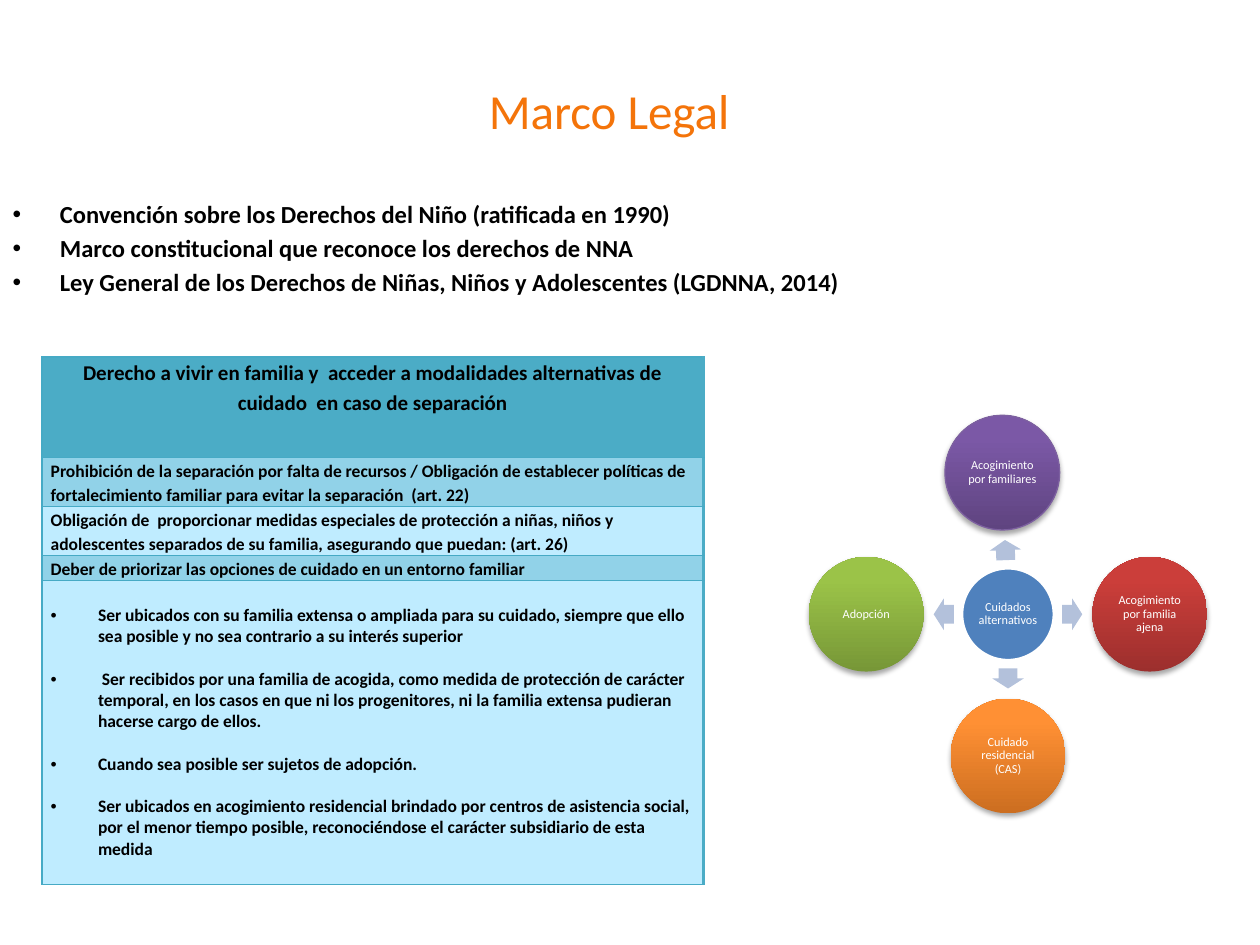
from dataclasses import dataclass
from math import cos, radians, sin
from typing import Any

from lxml.etree import SubElement
from pptx import Presentation
from pptx.dml.color import RGBColor
from pptx.enum.shapes import MSO_SHAPE as Shape
from pptx.enum.text import MSO_ANCHOR as Anchor, MSO_AUTO_SIZE as AutoSize, PP_ALIGN as Align
from pptx.oxml.ns import qn
from pptx.util import Pt

BLACK, WHITE, BORDER = "000000", "FFFFFF", "46AAC5"
HEADER, BAND, PALE = "4BACC6", "91D2E8", "BFECFF"

LAWS = [
    "Convención sobre los Derechos del Niño (ratificada en 1990)",
    "Marco constitucional que reconoce los derechos de NNA",
    "Ley General de los Derechos de Niñas, Niños y Adolescentes (LGDNNA, 2014)",
]
RIGHT_TO_FAMILY = "Derecho a vivir en familia y  acceder a modalidades alternativas de cuidado  en caso de separación"
DUTIES = [
    "Prohibición de la separación por falta de recursos / Obligación de establecer políticas de fortalecimiento familiar para evitar la separación  (art. 22)",
    "Obligación de  proporcionar medidas especiales de protección a niñas, niños y adolescentes separados de su familia, asegurando que puedan: (art. 26)",
    "Deber de priorizar las opciones de cuidado en un entorno familiar",
]
CARE_OPTIONS = [
    "Ser ubicados con su familia extensa o ampliada para su cuidado, siempre que ello sea posible y no sea contrario a su interés superior",
    " Ser recibidos por una familia de acogida, como medida de protección de carácter temporal, en los casos en que ni los progenitores, ni la familia extensa pudieran hacerse cargo de ellos.",
    "Cuando sea posible ser sujetos de adopción.",
    "Ser ubicados en acogimiento residencial brindado por centros de asistencia social, por el menor tiempo posible, reconociéndose el carácter subsidiario de esta medida",
]
ALTERNATIVES = [
    ("Acogimiento por familiares", 267.7, "5F4480", "7B58A6", "7D60A0"),
    ("Acogimiento por familia ajena", 0, "9C2F2D", "CB3E3A", None),
    ("Cuidado residencial (CAS)", 90, "CC6E20", "FF9034", None),
    ("Adopción", 180, "779737", "9BC348", None),
]


def rgb(code):
    """Turn a hex string into a colour."""
    return RGBColor.from_string(code)


def write_text(frame, lines, *, size, color, font="Calibri", bold=False, align=Align.LEFT,
               spacing=1.0, gap=0, indent=0):
    """Fill a text frame with one paragraph per line, bulleted when indented."""
    frame.word_wrap = True
    for number, line in enumerate(lines):
        paragraph = frame.add_paragraph() if number else frame.paragraphs[0]
        if indent:
            properties = paragraph._p.get_or_add_pPr()
            properties.set("marL", str(Pt(indent)))
            properties.set("indent", str(-Pt(indent)))
            SubElement(properties, qn("a:buFont"), typeface="Arial")
            SubElement(properties, qn("a:buChar"), char="•")
        paragraph.alignment = align
        paragraph.line_spacing = spacing
        paragraph.space_before = Pt(gap if number else 0)
        words = paragraph.add_run()
        words.text = line
        words.font.name, words.font.size, words.font.bold = font, Pt(size), bold
        words.font.color.rgb = rgb(color)


def set_margins(target, left, top, right, bottom):
    """Set the inner margins of a cell or text frame."""
    target.margin_left, target.margin_top = Pt(left), Pt(top)
    target.margin_right, target.margin_bottom = Pt(right), Pt(bottom)


@dataclass
class LegalSlide:
    """Hold the style and the current slide."""
    slide: Any
    font: str = "Calibri"

    def placeholder(self, target, box, lines, anchor, **style):
        """Move a template placeholder and fill it."""
        target.left, target.top, target.width, target.height = map(Pt, box)
        target.text_frame.auto_size = AutoSize.NONE
        target.text_frame.vertical_anchor = anchor
        write_text(target.text_frame, lines, font=self.font, **style)

    def table(self, left, top, width, heights):
        """Add a one-column table with the given row heights."""
        grid = self.slide.shapes.add_table(len(heights), 1, Pt(left), Pt(top), Pt(width), Pt(sum(heights))).table
        for row, height in zip(grid.rows, heights):
            row.height = Pt(height)
        return grid

    def cell(self, cell, lines, fill, padding=0, **style):
        """Border, fill and write one table cell."""
        properties = cell._tc.get_or_add_tcPr()
        for side, color, weight in (("L", BORDER, 0.75), ("R", HEADER, 2), ("T", BORDER, 0.75), ("B", BORDER, 0.75)):
            edge = SubElement(properties, qn(f"a:ln{side}"), w=str(Pt(weight)))
            SubElement(SubElement(edge, qn("a:solidFill")), qn("a:srgbClr"), val=color)
        cell.fill.solid()
        cell.fill.fore_color.rgb = rgb(fill)
        set_margins(cell, 5, padding, 5, padding)
        write_text(cell.text_frame, lines, font=self.font, color=BLACK, bold=True, **style)

    def centred(self, kind, x, y, width, height, fill, line=None, weight=0.75):
        """Add a preset shape around a centre point."""
        shape = self.slide.shapes.add_shape(kind, Pt(x - width / 2), Pt(y - height / 2), Pt(width), Pt(height))
        shape.shadow.inherit = False
        shape.fill.solid()
        shape.fill.fore_color.rgb = rgb(fill)
        if line:
            shape.line.color.rgb = rgb(line)
            shape.line.width = Pt(weight)
        else:
            shape.line.fill.background()
        return shape

    def circle(self, label, x, y, diameter, fill, line=None, weight=0.75):
        """Add a labelled circle."""
        circle = self.centred(Shape.OVAL, x, y, diameter, diameter, fill, line, weight)
        set_margins(circle.text_frame, 0.7, 0.7, 0.7, 0.7)
        circle.text_frame.vertical_anchor = Anchor.MIDDLE
        write_text(circle.text_frame, [label], font=self.font, size=7, color=WHITE,
                   align=Align.CENTER, spacing=0.9)
        return circle

    def glossy_circle(self, label, x, y, diameter, dark, light, line):
        """Add a circle with a vertical gradient and a soft shadow."""
        circle = self.circle(label, x, y, diameter, light, line)
        circle.fill.gradient()
        circle.fill.gradient_angle = 90
        for stop, color, position in zip(circle.fill.gradient_stops, (dark, light), (0, 0.8)):
            stop.color.rgb = rgb(color)
            stop.position = position
        effects = circle._element.spPr.find(qn("a:effectLst"))
        shadow = SubElement(effects, qn("a:outerShdw"), blurRad=str(Pt(3.1)), dist=str(Pt(1.8)),
                            dir="5400000", rotWithShape="0")
        SubElement(SubElement(shadow, qn("a:srgbClr"), val=BLACK), qn("a:alpha"), val="35000")

    def arrow(self, x, y, angle):
        """Add a block arrow turned to an angle."""
        arrow = self.centred(Shape.RIGHT_ARROW, x, y, 11.5, 18, "B3C1DB")
        arrow.adjustments[0], arrow.adjustments[1] = 0.6, 0.5
        arrow.rotation = angle


def main():
    """Build and save the slide."""
    deck = Presentation()
    deck.slide_width, deck.slide_height = Pt(720), Pt(540)
    page = LegalSlide(deck.slides.add_slide(deck.slide_layouts[1]))
    title, body = page.slide.placeholders
    page.placeholder(title, (24, 36, 648, 54), ["Marco Legal"], Anchor.MIDDLE,
                     size=28, color="F4740A", align=Align.CENTER)
    page.placeholder(body, (0, 110, 720, 412), LAWS, Anchor.TOP,
                     size=14, color=BLACK, bold=True, gap=2.8, indent=27)

    rights = page.table(24, 204, 378, [57.6, 27.8, 27.8, 14.1, 172.5])
    page.cell(rights.cell(0, 0), [RIGHT_TO_FAMILY], HEADER, size=12, align=Align.CENTER, spacing=1.15)
    for row, duty in enumerate(DUTIES, start=1):
        page.cell(rights.cell(row, 0), [duty], BAND if row % 2 else PALE, size=10, spacing=1.15)
    page.cell(rights.cell(4, 0), CARE_OPTIONS, PALE, padding=14, size=10, gap=12.2, indent=27)

    hub_x, hub_y = 576, 351
    page.circle("Cuidados alternativos", hub_x, hub_y, 53, "4F81BD", WHITE, 2)
    for label, angle, dark, light, line in ALTERNATIVES:
        across, down = cos(radians(angle)), sin(radians(angle))
        page.arrow(hub_x + 36.7 * across, hub_y + 36.7 * down, angle)
        page.glossy_circle(label, hub_x + 81 * across, hub_y + 81 * down, 65.5, dark, light, line)
    deck.save("out.pptx")


if __name__ == "__main__":
    main()
